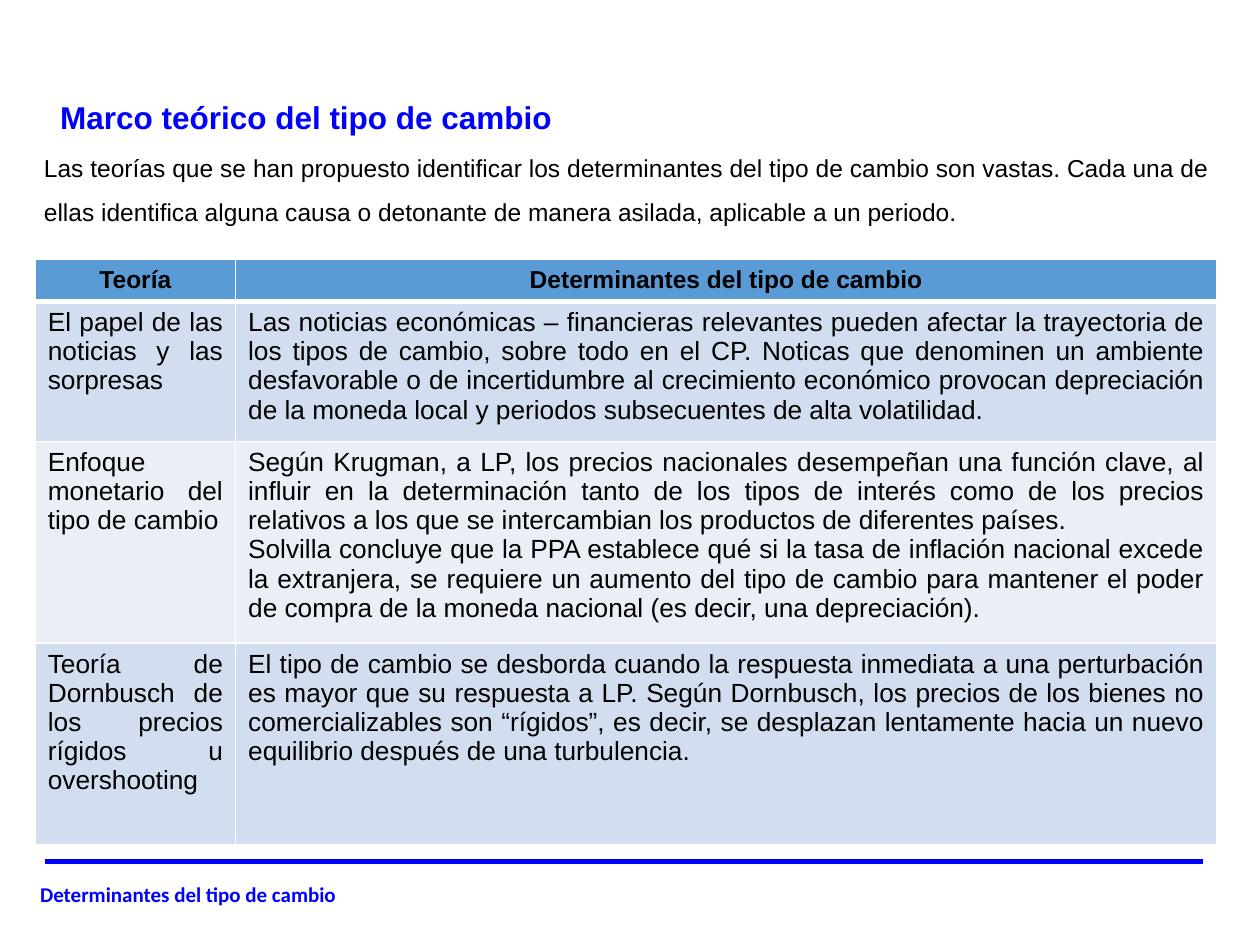
import pptx
import pptx.util
import pptx.dml.color
import pptx.enum.shapes
import pptx.enum.text
import pptx.oxml.ns
import lxml.etree

Inches = pptx.util.Inches
Pt = pptx.util.Pt
RGBColor = pptx.dml.color.RGBColor
Align = pptx.enum.text.PP_ALIGN

BLUE = RGBColor(0x00, 0x00, 0xFF)
BLACK = RGBColor(0x00, 0x00, 0x00)
WHITE = RGBColor(0xFF, 0xFF, 0xFF)
HEADER_FILL = RGBColor(0x5B, 0x9B, 0xD5)
BAND_FILLS = [RGBColor(0xD2, 0xDE, 0xEF), RGBColor(0xEA, 0xEF, 0xF7)]

TITLE = "Marco teórico del tipo de cambio"
INTRO = (
    "Las teorías que se han propuesto identificar los determinantes del tipo de cambio "
    "son vastas. Cada una de ellas identifica alguna causa o detonante de manera asilada, "
    "aplicable a un periodo."
)
FOOTER = "Determinantes del tipo de cambio"
THEORIES = [
    ("Teoría", "Determinantes del tipo de cambio"),
    (
        "El papel de las noticias y las sorpresas",
        "Las noticias económicas – financieras relevantes pueden afectar la trayectoria de "
        "los tipos de cambio, sobre todo en el CP. Noticas que denominen un ambiente "
        "desfavorable o de incertidumbre al crecimiento económico provocan depreciación de "
        "la moneda local y periodos subsecuentes de alta volatilidad.",
    ),
    (
        "Enfoque monetario del tipo de cambio",
        "Según Krugman, a LP, los precios nacionales desempeñan una función clave, al influir "
        "en la determinación tanto de los tipos de interés como de los precios relativos a "
        "los que se intercambian los productos de diferentes países.\n"
        "Solvilla concluye que la PPA establece qué si la tasa de inflación nacional excede "
        "la extranjera, se requiere un aumento del tipo de cambio para mantener el poder de "
        "compra de la moneda nacional (es decir, una depreciación).",
    ),
    (
        "Teoría de Dornbusch de los precios rígidos u overshooting",
        "El tipo de cambio se desborda cuando la respuesta inmediata a una perturbación es "
        "mayor que su respuesta a LP. Según Dornbusch, los precios de los bienes no "
        "comercializables son “rígidos”, es decir, se desplazan lentamente hacia un nuevo "
        "equilibrio después de una turbulencia.",
    ),
]
COLUMN_WIDTHS = [1.59, 7.79]
ROW_HEIGHTS = [0.32, 1.11, 1.6, 1.6]
TABLE_LEFT, TABLE_TOP = 0.28, 2.06


def format_text(frame, size, color, font="Arial", bold=False, align=Align.LEFT):
    for para in frame.paragraphs:
        para.alignment = align
        for span in para.runs:
            span.font.name = font
            span.font.size = Pt(size)
            span.font.bold = bold
            span.font.color.rgb = color


def add_text(page, area, text, size, color, **style):
    box = page.shapes.add_textbox(*map(Inches, area))
    box.text_frame.word_wrap = True
    box.text_frame.text = text
    format_text(box.text_frame, size, color, **style)
    return box.text_frame.paragraphs[0]


def set_borders(cell, widths):
    properties = cell._tc.get_or_add_tcPr()
    for side, width in widths.items():
        line = lxml.etree.SubElement(
            properties, pptx.oxml.ns.qn(f"a:ln{side}"), w=str(Pt(width))
        )
        fill = lxml.etree.SubElement(line, pptx.oxml.ns.qn("a:solidFill"))
        lxml.etree.SubElement(fill, pptx.oxml.ns.qn("a:srgbClr"), val=str(WHITE))


def add_theory_table(page):
    table = page.shapes.add_table(
        len(THEORIES), len(COLUMN_WIDTHS), Inches(TABLE_LEFT), Inches(TABLE_TOP),
        Inches(sum(COLUMN_WIDTHS)), Inches(sum(ROW_HEIGHTS)),
    ).table
    for column, width in zip(table.columns, COLUMN_WIDTHS):
        column.width = Inches(width)
    for row, height in zip(table.rows, ROW_HEIGHTS):
        row.height = Inches(height)
    for row_index, texts in enumerate(THEORIES):
        header = row_index == 0
        for column_index, text in enumerate(texts):
            cell = table.cell(row_index, column_index)
            cell.text_frame.text = text
            format_text(
                cell.text_frame, 14 if header else 15, BLACK, bold=header,
                align=Align.CENTER if header else Align.JUSTIFY,
            )
            top, bottom = 3 if row_index == 1 else 1, 3 if header else 1
            set_borders(cell, {"L": 1, "R": 1, "T": top, "B": bottom})
            cell.fill.solid()
            cell.fill.fore_color.rgb = (
                HEADER_FILL if header else BAND_FILLS[(row_index - 1) % 2]
            )


def add_footer_line(page):
    line = page.shapes.add_connector(
        pptx.enum.shapes.MSO_CONNECTOR.STRAIGHT,
        Inches(0.36), Inches(6.84), Inches(9.55), Inches(6.84),
    )
    line.line.color.rgb = BLUE
    line.line.width = Pt(3)
    lxml.etree.SubElement(line._element.spPr, pptx.oxml.ns.qn("a:effectLst"))


def main():
    deck = pptx.Presentation()
    deck.slide_width, deck.slide_height = Inches(10), Inches(7.5)
    page = deck.slides.add_slide(deck.slide_layouts[6])
    add_text(page, (0.22, 6.95, 7.14, 0.3), FOOTER, 12, BLUE, font="Calibri", bold=True)
    add_footer_line(page)
    intro = add_text(page, (0.25, 1.05, 9.45, 0.79), INTRO, 14, BLACK, align=Align.JUSTIFY)
    intro.line_spacing = 1.5
    add_text(page, (0.38, 0.73, 9.13, 0.4), TITLE, 18, BLUE, bold=True)
    add_theory_table(page)
    deck.save("out.pptx")


if __name__ == "__main__":
    main()
